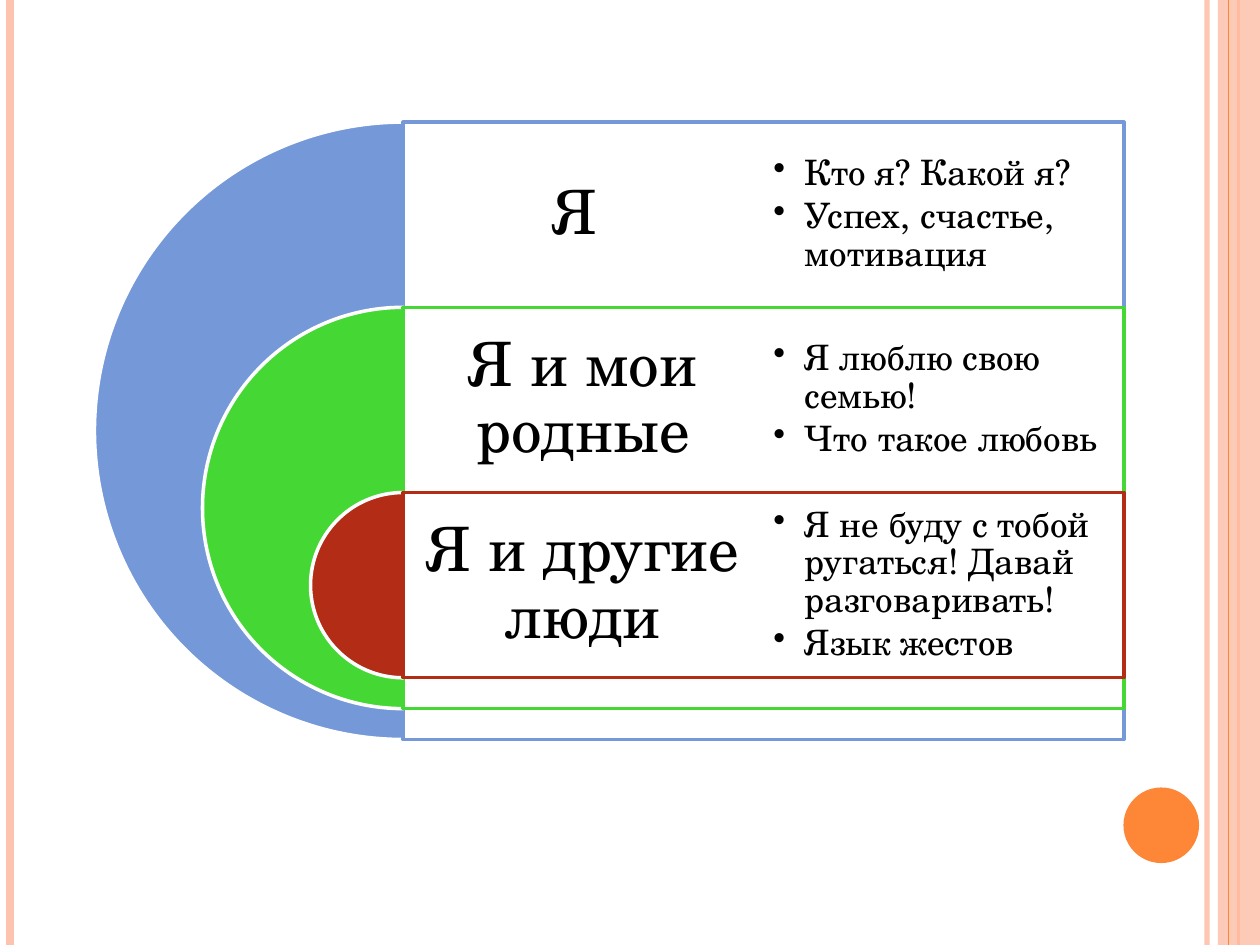
import pptx
import pptx.util
import pptx.dml.color
import pptx.enum.shapes
import pptx.enum.text
import pptx.oxml.ns
import lxml.etree

Pt = pptx.util.Pt
SHAPES = pptx.enum.shapes.MSO_SHAPE
qn = pptx.oxml.ns.qn

FONT = "TeX Gyre Schola"
COLORS = {
    "blue": "7598D9", "green": "45D834", "red": "B32C16",
    "orange": "FE8637", "peach": "FEC3AE", "white": "FFFFFF", "black": "000000",
}

# Content: colour, label, bullet points
ROWS = [
    ("blue", "Я ", ["Кто я? Какой я?", "Успех, счастье, мотивация"]),
    ("green", "Я и мои родные", ["Я люблю свою семью!", "Что такое любовь"]),
    ("red", "Я и другие люди",
     ["Я не буду с тобой ругаться! Давай разговаривать!", "Язык жестов"]),
]

# Vertical side lines: x, colour, width, opacity in percent
BACK_LINES = [(689.8, "peach", 3, 93), (5.8, "peach", 4.5, 100), (707.8, "orange", 1.5, 100)]
FRONT_LINES = [(702, "orange", 0.75, 100)]

PAGE_WIDTH, PAGE_HEIGHT = 720, 540
CENTER_X, TOP = 230.4, 69.8
ROW_HEIGHT = 105.84
RING_STEP = ROW_HEIGHT * 7 / 6
COLUMN_WIDTH = 205.9


def rgb(name):
    return pptx.dml.color.RGBColor.from_string(COLORS[name])


def set_opacity(fill, percent):
    color = fill._xPr.find(qn("a:solidFill"))[0]
    lxml.etree.SubElement(color, qn("a:alpha")).set("val", str(percent * 1000))


def add_shape(page, kind, frame, fill, line=None, opacity=100):
    shape = page.shapes.add_shape(kind, *map(Pt, frame))
    shape.shadow.inherit = False
    shape.fill.solid()
    shape.fill.fore_color.rgb = rgb(fill)
    if opacity < 100:
        set_opacity(shape.fill, opacity)
    if line:
        shape.line.color.rgb = rgb(line)
        shape.line.width = Pt(2)
    else:
        shape.line.fill.background()
    return shape


def add_side_lines(page, lines):
    for x, color, width, opacity in lines:
        line = page.shapes.add_connector(
            pptx.enum.shapes.MSO_CONNECTOR.STRAIGHT, Pt(x), 0, Pt(x), Pt(PAGE_HEIGHT))
        line.line.color.rgb = rgb(color)
        line.line.width = Pt(width)
        if opacity < 100:
            set_opacity(line.line.fill, opacity)
        lxml.etree.SubElement(line._element.spPr, qn("a:effectLst"))


def add_bullet(para):
    properties = para._p.get_or_add_pPr()
    properties.set("marL", str(Pt(18)))
    properties.set("indent", str(-Pt(18)))
    lxml.etree.SubElement(properties, qn("a:buChar")).set("char", "•")


def add_text(page, left, top, texts, size, margin, space_after, bullets=False):
    box = page.shapes.add_textbox(Pt(left), Pt(top), Pt(COLUMN_WIDTH), Pt(ROW_HEIGHT))
    frame = box.text_frame
    frame.word_wrap = True
    frame.vertical_anchor = pptx.enum.text.MSO_ANCHOR.MIDDLE
    frame.margin_left = frame.margin_right = Pt(margin)
    frame.margin_top = frame.margin_bottom = Pt(margin)
    frame.text = "\n".join(texts)
    for para in frame.paragraphs:
        if bullets:
            add_bullet(para)
            para.level = 1
        else:
            para.alignment = pptx.enum.text.PP_ALIGN.CENTER
        para.line_spacing = 0.9
        para.space_after = Pt(space_after)
        for span in para.runs:
            span.font.name = FONT
            span.font.size = Pt(size)
            span.font.color.rgb = rgb("black")


def main():
    deck = pptx.Presentation()
    deck.slide_width, deck.slide_height = Pt(PAGE_WIDTH), Pt(PAGE_HEIGHT)
    page = deck.slides.add_slide(deck.slide_layouts[6])

    # Side decoration
    add_side_lines(page, BACK_LINES)
    add_shape(page, SHAPES.RECTANGLE, (696, 0, 24, PAGE_HEIGHT), "peach", opacity=87)
    add_side_lines(page, FRONT_LINES)
    add_shape(page, SHAPES.OVAL, (642, 450, 43.2, 43.2), "orange")

    # Nested half circles, each with its frame, label and list
    for index, (color, label, points) in enumerate(ROWS):
        top = TOP + index * ROW_HEIGHT
        diameter = ROW_HEIGHT + (len(ROWS) - 1 - index) * RING_STEP
        half_circle = add_shape(
            page, SHAPES.PIE, (CENTER_X - diameter / 2, top, diameter, diameter),
            color, "white")
        half_circle.adjustments[0] = 54   # 90 degrees
        half_circle.adjustments[1] = 162  # 270 degrees
        add_shape(page, SHAPES.RECTANGLE, (CENTER_X, top, 2 * COLUMN_WIDTH, diameter),
                  "white", color, opacity=90)
        add_text(page, CENTER_X, top, [label], 35, 10.8, 12.25)
        add_text(page, CENTER_X + COLUMN_WIDTH, top, points, 20, 5.6, 3, bullets=True)

    deck.save("out.pptx")


if __name__ == "__main__":
    main()
